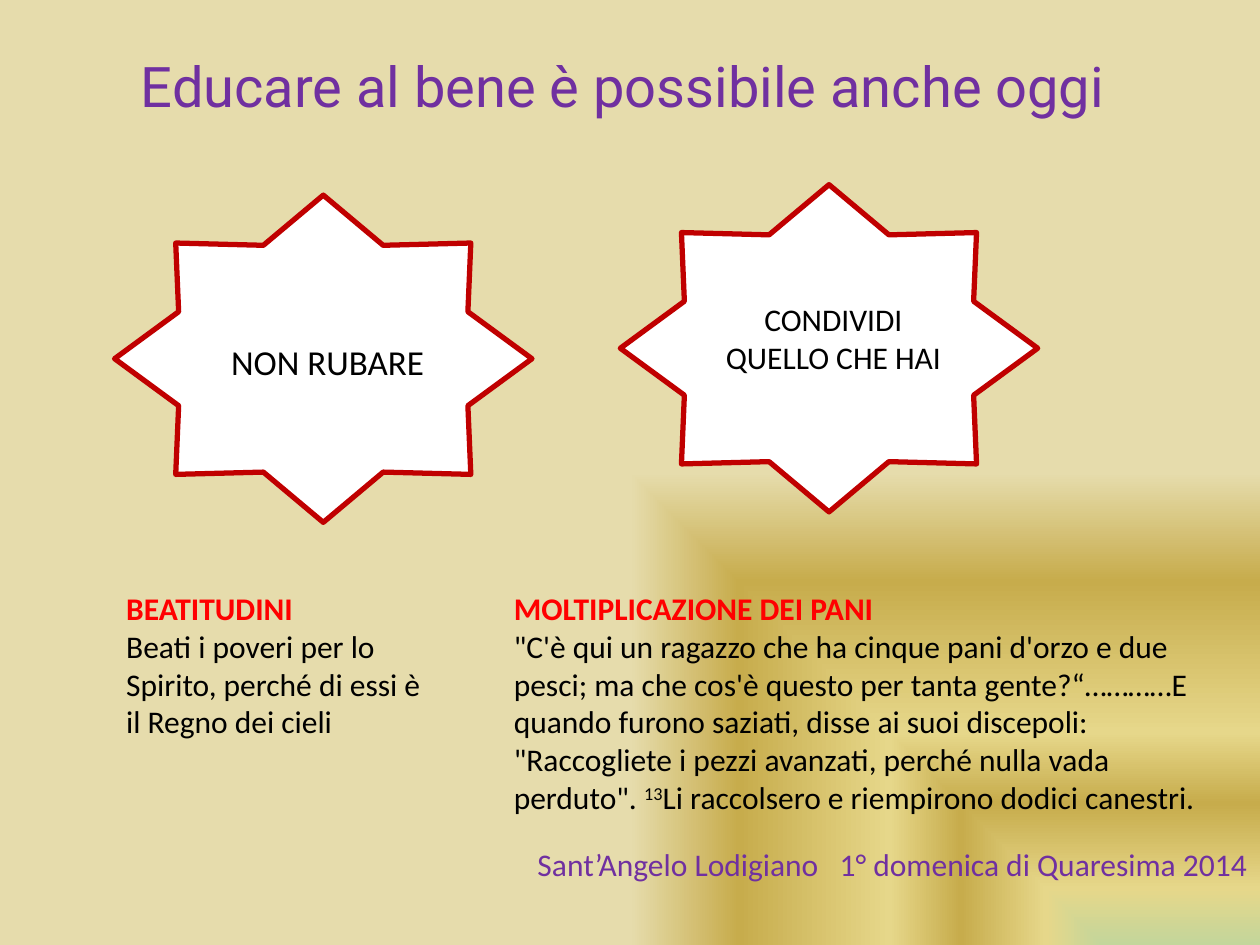
from pptx import Presentation
from pptx.dml.color import RGBColor as RGB
from pptx.enum.shapes import MSO_SHAPE as SHAPE
from pptx.enum.text import MSO_ANCHOR as ANCHOR, MSO_AUTO_SIZE as FIT, PP_ALIGN as ALIGN
from pptx.oxml.ns import qn
from pptx.util import Pt
from lxml.etree import SubElement as Sub

PURPLE = RGB(0x70, 0x30, 0xA0)
CRIMSON = RGB(0xC0, 0x00, 0x00)
RED = RGB(0xFF, 0x00, 0x00)
BLACK = RGB(0x00, 0x00, 0x00)
WHITE = RGB(0xFF, 0xFF, 0xFF)
GREEN = RGB(0xC3, 0xD6, 0x9B)
YELLOW = RGB(0xE6, 0xD7, 0x8A)
GOLD = RGB(0xC7, 0xAC, 0x4C)
SAND = RGB(0xE6, 0xDC, 0xAC)
STOPS = [(0, GREEN), (12, YELLOW), (30, GOLD), (45, YELLOW), (77, GOLD), (100, SAND)]


def paint_back(slide):
    slide.background.fill.gradient()
    grad = slide.element.find(".//" + qn("a:gradFill"))
    for child in list(grad):
        grad.remove(child)
    stops = Sub(grad, qn("a:gsLst"))
    for place, color in STOPS:
        stop = Sub(stops, qn("a:gs"), pos=str(place * 1000))
        Sub(stop, qn("a:srgbClr"), val=str(color))
    shade = Sub(grad, qn("a:path"), path="rect")
    Sub(shade, qn("a:fillToRect"), l="100000", t="100000")


def put_text(para, text, size=18, font="Calibri", color=BLACK, bold=False, raised=False):
    run = para.add_run()
    run.text = text
    run.font.size = Pt(size)
    run.font.name = font
    run.font.color.rgb = color
    run.font.bold = bold
    if raised:
        run.font._element.set("baseline", "30000")


def set_box(shape, box):
    shape.left, shape.top, shape.width, shape.height = map(Pt, box)


def add_box(shapes, box, align=ALIGN.LEFT):
    frame = shapes.add_textbox(*map(Pt, box)).text_frame
    frame.word_wrap = True
    frame.auto_size = FIT.SHAPE_TO_FIT_TEXT
    frame.paragraphs[0].alignment = align
    return frame


def add_title(slide, box, text):
    title = slide.shapes.title
    set_box(title, box)
    frame = title.text_frame
    frame.auto_size = FIT.NONE
    frame.vertical_anchor = ANCHOR.TOP
    put_text(frame.paragraphs[0], text, size=32, font="Roboto", color=PURPLE)


def add_star(slide, box, text, size, drop, height):
    left, top, width, _ = box
    inset = 45
    group = slide.shapes.add_group_shape()
    star = group.shapes.add_shape(SHAPE.STAR_8_POINT, *map(Pt, box))
    star.shadow.inherit = False
    star.fill.solid()
    star.fill.fore_color.rgb = WHITE
    star.line.color.rgb = CRIMSON
    star.line.width = Pt(3)
    label = (left + inset, top + drop, width - 2 * inset + 5, height)
    frame = add_box(group.shapes, label, ALIGN.CENTER)
    put_text(frame.paragraphs[0], text, size=size)


def add_verse(slide, box, head, parts):
    frame = add_box(slide.shapes, box)
    put_text(frame.paragraphs[0], head, color=RED, bold=True)
    para = frame.add_paragraph()
    for text, raised in parts:
        put_text(para, text, raised=raised)


def add_foot(slide, box, text):
    frame = add_box(slide.shapes, box, ALIGN.RIGHT)
    put_text(frame.paragraphs[0], text, color=PURPLE)


def main():
    deck = Presentation()
    deck.slide_width, deck.slide_height = Pt(720), Pt(540)
    slide = deck.slides.add_slide(deck.slide_layouts[5])
    paint_back(slide)
    add_title(slide, (0, 26, 720, 46), "Educare al bene è possibile anche oggi ")
    add_foot(slide, (130, 479.5, 590, 29),
             "Sant’Angelo Lodigiano   1° domenica di Quaresima 2014")
    add_star(slide, (65.5, 111.5, 238.5, 187), "NON RUBARE", 20, 79.5, 31.5)
    add_star(slide, (354.5, 105.5, 238.5, 187), "CONDIVIDI QUELLO CHE HAI", 18, 62.5, 51)
    add_verse(slide, (65, 333, 193, 94), "BEATITUDINI", [
        ("Beati i poveri per lo Spirito, perché di essi è il Regno dei cieli", False)])
    add_verse(slide, (286.5, 333, 420, 138), "MOLTIPLICAZIONE DEI PANI", [
        ("\"C'è qui un ragazzo che ha cinque pani d'orzo e due pesci; ma che cos'è "
         "questo per tanta gente?“…………E quando furono saziati, disse ai suoi "
         "discepoli: \"Raccogliete i pezzi avanzati, perché nulla vada perduto\". ", False),
        ("13", True),
        ("Li raccolsero e riempirono dodici canestri.", False)])
    deck.save("out.pptx")


if __name__ == "__main__":
    main()
